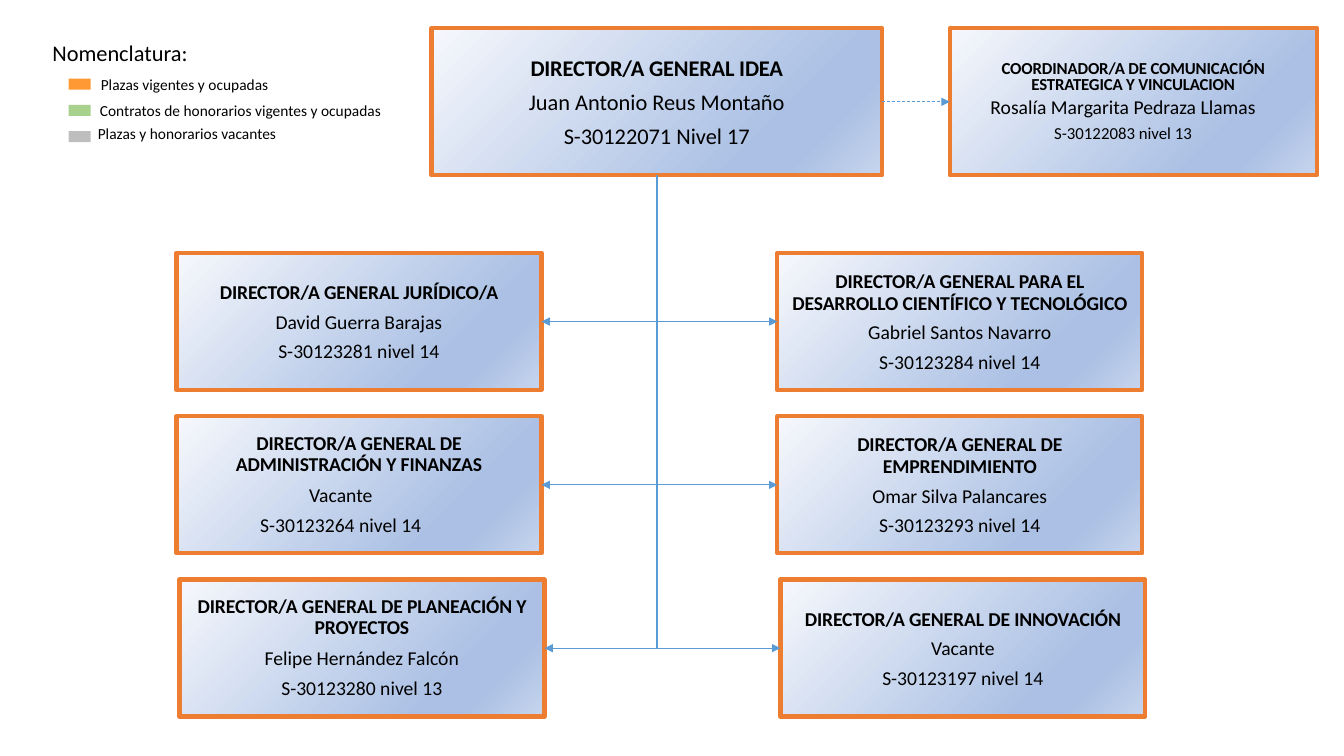
from lxml import etree
from pptx import Presentation
from pptx import util as u
from pptx.dml.color import RGBColor
from pptx.enum import dml, shapes, text
from pptx.oxml import parse_xml
from pptx.oxml.ns import nsdecls, qn

THEME = {
    "font": "Calibri",
    "ink": "000000",
    "border": "ED7D31",
    "link": "5B9BD5",
    "gradient": [(0, "F6F8FC"), (74, "ABC0E4"), (83, "ABC0E4"), (100, "C7D5ED")],
    "large": 16,
    "medium": 14,
    "small": 12,
    "legend": 11,
}
LARGE, MEDIUM, SMALL = THEME["large"], THEME["medium"], THEME["small"]

LEGEND_TITLE = "Nomenclatura:"
LEGEND = [
    ("Plazas vigentes y ocupadas", "FF9933", 1.0, 0.74),
    ("Contratos de honorarios vigentes y ocupadas", "A9D18E", 0.99, 0.99),
    ("Plazas y honorarios vacantes", "BEBEBE", 0.97, 1.22),
]

# fmt: (text, size, bold, line spacing, space before, side margin)
HEAD = [
    ("DIRECTOR/A GENERAL IDEA", LARGE, True, 1.0, 6.4, 0),
    ("Juan Antonio Reus Montaño", LARGE, False, 1.25, 0.1, 0),
    ("S-30122071 Nivel 17", LARGE, False, 1.25, 0.1, 0),
]
COORDINATOR = [
    ("COORDINADOR/A DE COMUNICACIÓN ESTRATEGICA Y VINCULACION",
     SMALL, True, u.Pt(11.9), 2.5, 0.2),
    ("Rosalía Margarita Pedraza Llamas", MEDIUM, False, u.Pt(16.6), 0.6, 0),
    ("S-30122083 nivel 13", SMALL, False, u.Pt(16.6), 0.6, 0),
]


def director(titles, details, title_style, detail_style):
    spacing, before, margin = title_style
    lines = [(title, MEDIUM, True, spacing, before if i == 0 else 0, margin)
             for i, title in enumerate(titles)]
    return lines + [(detail, MEDIUM, False, *detail_style, 0) for detail in details]


SINGLE = (1.0, 5.2, 0)
DOUBLE = (u.Pt(15.9), 1.1, 0)
TIGHT = (u.Pt(15.2), 2.9, 0.36)
WIDE = (u.Pt(15.1), 3, 0)
PLAIN = (1.0, 4.2)
LOOSE = (1.25, 0)
FIXED = (u.Pt(21), 0.8)

DIRECTORS = [
    [
        director(["DIRECTOR/A GENERAL JURÍDICO/A"],
                 ["David Guerra Barajas", "S-30123281 nivel 14"], SINGLE, PLAIN),
        director(["DIRECTOR/A GENERAL PARA EL", "DESARROLLO CIENTÍFICO Y TECNOLÓGICO"],
                 ["Gabriel Santos Navarro", "S-30123284 nivel 14"], DOUBLE, LOOSE),
    ],
    [
        director(["DIRECTOR/A GENERAL DE ADMINISTRACIÓN Y FINANZAS"],
                 ["Vacante", "S-30123264 nivel 14"], TIGHT, FIXED),
        director(["DIRECTOR/A GENERAL DE", "EMPRENDIMIENTO"],
                 ["Omar Silva Palancares", "S-30123293 nivel 14"], DOUBLE, LOOSE),
    ],
    [
        director(["DIRECTOR/A GENERAL DE PLANEACIÓN Y PROYECTOS"],
                 ["Felipe Hernández Falcón", "S-30123280 nivel 13"], WIDE, FIXED),
        director(["DIRECTOR/A GENERAL DE INNOVACIÓN"],
                 ["Vacante", "S-30123197 nivel 14"], SINGLE, LOOSE),
    ],
]

COLUMNS = [1.75, 7.71]
FIRST_ROW, ROW_STEP = 2.51, 1.62
ROW_SHIFTS = [0, 0, 0.03]
BOX_WIDTH, BOX_HEIGHT = 3.62, 1.36
TOP, RIGHT_SITE, LEFT_SITE, BOTTOM_SITE = 0.28, 3, 1, 2


def color(value):
    return RGBColor.from_string(value)


def add_text(para, words, size, bold=False):
    span = para.add_run()
    span.text = words
    span.font.name = THEME["font"]
    span.font.size = u.Pt(size)
    span.font.bold = bold
    span.font.color.rgb = color(THEME["ink"])
    if bold:
        span.font._element.set("spc", "-10")


def add_label(page, left, top, width, height, words, size):
    box = page.shapes.add_textbox(*map(u.Inches, (left, top, width, height)))
    frame = box.text_frame
    frame.word_wrap = True
    frame.margin_left = frame.margin_right = frame.margin_bottom = 0
    frame.margin_top = u.Inches(0.01)
    para = frame.paragraphs[0]
    para.space_before = u.Pt(1.1)
    add_text(para, words, size)


def add_rect(page, left, top, width, height):
    box = page.shapes.add_shape(
        shapes.MSO_SHAPE.RECTANGLE, *map(u.Inches, (left, top, width, height)))
    box.shadow.inherit = False
    return box


def add_post(page, left, top, width, height, lines):
    box = add_rect(page, left, top, width, height)
    box.fill.gradient()
    box.fill.gradient_angle = 315
    stops = box._element.spPr.find(qn("a:gradFill")).find(qn("a:gsLst"))
    for stop in list(stops):
        stops.remove(stop)
    for position, value in THEME["gradient"]:
        stops.append(parse_xml(
            f'<a:gs {nsdecls("a")} pos="{position * 1000}"><a:srgbClr val="{value}"/></a:gs>'))
    box.line.color.rgb = color(THEME["border"])
    box.line.width = u.Pt(3)
    frame = box.text_frame
    frame.word_wrap = True
    frame.vertical_anchor = text.MSO_ANCHOR.MIDDLE
    for i, (words, size, bold, spacing, before, margin) in enumerate(lines):
        para = frame.add_paragraph() if i else frame.paragraphs[0]
        para.alignment = text.PP_ALIGN.CENTER
        para.line_spacing = spacing
        para.space_before = u.Pt(before)
        if margin:
            properties = para._p.get_or_add_pPr()
            properties.set("marL", str(u.Inches(margin)))
            properties.set("marR", str(u.Inches(margin)))
        add_text(para, words, size, bold)
    return box


def add_arrow(page, kind, start, start_site, end, end_site):
    arrow = page.shapes.add_connector(kind, 0, 0, 0, 0)
    arrow.begin_connect(start, start_site)
    arrow.end_connect(end, end_site)
    arrow.line.color.rgb = color(THEME["link"])
    arrow.line.width = u.Pt(0.5)
    line = arrow.line._get_or_add_ln()
    etree.SubElement(line, qn("a:tailEnd"), type="triangle")
    etree.SubElement(arrow._element.spPr, qn("a:effectLst"))
    return arrow


def add_branch(page, head, post, on_left):
    arrow = add_arrow(page, shapes.MSO_CONNECTOR.ELBOW, head, BOTTOM_SITE,
                      post, RIGHT_SITE if on_left else LEFT_SITE)
    start_x, start_y = head.left + head.width // 2, head.top + head.height
    end_x = post.left + post.width if on_left else post.left
    end_y = post.top + post.height // 2
    middle_x, middle_y = (start_x + end_x) // 2, (start_y + end_y) // 2
    half_drop, half_reach = (end_y - start_y) // 2, abs(end_x - start_x) // 2
    side = 1 if on_left else -1
    arrow.begin_x, arrow.end_x = middle_x - side * half_drop, middle_x + side * half_drop
    arrow.begin_y, arrow.end_y = middle_y - half_reach, middle_y + half_reach
    properties = arrow._element.spPr
    properties.find(qn("a:xfrm")).set("rot", str((90 if on_left else 270) * 60000))
    properties.find(qn("a:prstGeom")).set("prst", "bentConnector2")


def main():
    deck = Presentation()
    deck.slide_width, deck.slide_height = u.Inches(13.33), u.Inches(7.5)
    page = deck.slides.add_slide(deck.slide_layouts[6])

    add_label(page, 0.52, 0.38, 1.74, 0.28, LEGEND_TITLE, LARGE)
    for i, (words, value, left, top) in enumerate(LEGEND):
        swatch = add_rect(page, 0.68, 0.78 + i * 0.26, 0.22, 0.11)
        swatch.fill.solid()
        swatch.fill.fore_color.rgb = color(value)
        swatch.line.fill.background()
        add_label(page, left, top, 2.87, 0.2, words, THEME["legend"])

    head = add_post(page, 4.28, TOP, 4.47, 1.46, HEAD)
    coordinator = add_post(page, 9.42, TOP, 3.64, 1.46, COORDINATOR)
    for row, (posts, shift) in enumerate(zip(DIRECTORS, ROW_SHIFTS)):
        for column, lines in enumerate(posts):
            post = add_post(page, COLUMNS[column] + shift, FIRST_ROW + row * ROW_STEP,
                            BOX_WIDTH, BOX_HEIGHT, lines)
            add_branch(page, head, post, column == 0)

    advice = add_arrow(page, shapes.MSO_CONNECTOR.STRAIGHT,
                       head, RIGHT_SITE, coordinator, LEFT_SITE)
    advice.line.dash_style = dml.MSO_LINE.DASH
    deck.save("out.pptx")


if __name__ == "__main__":
    main()
